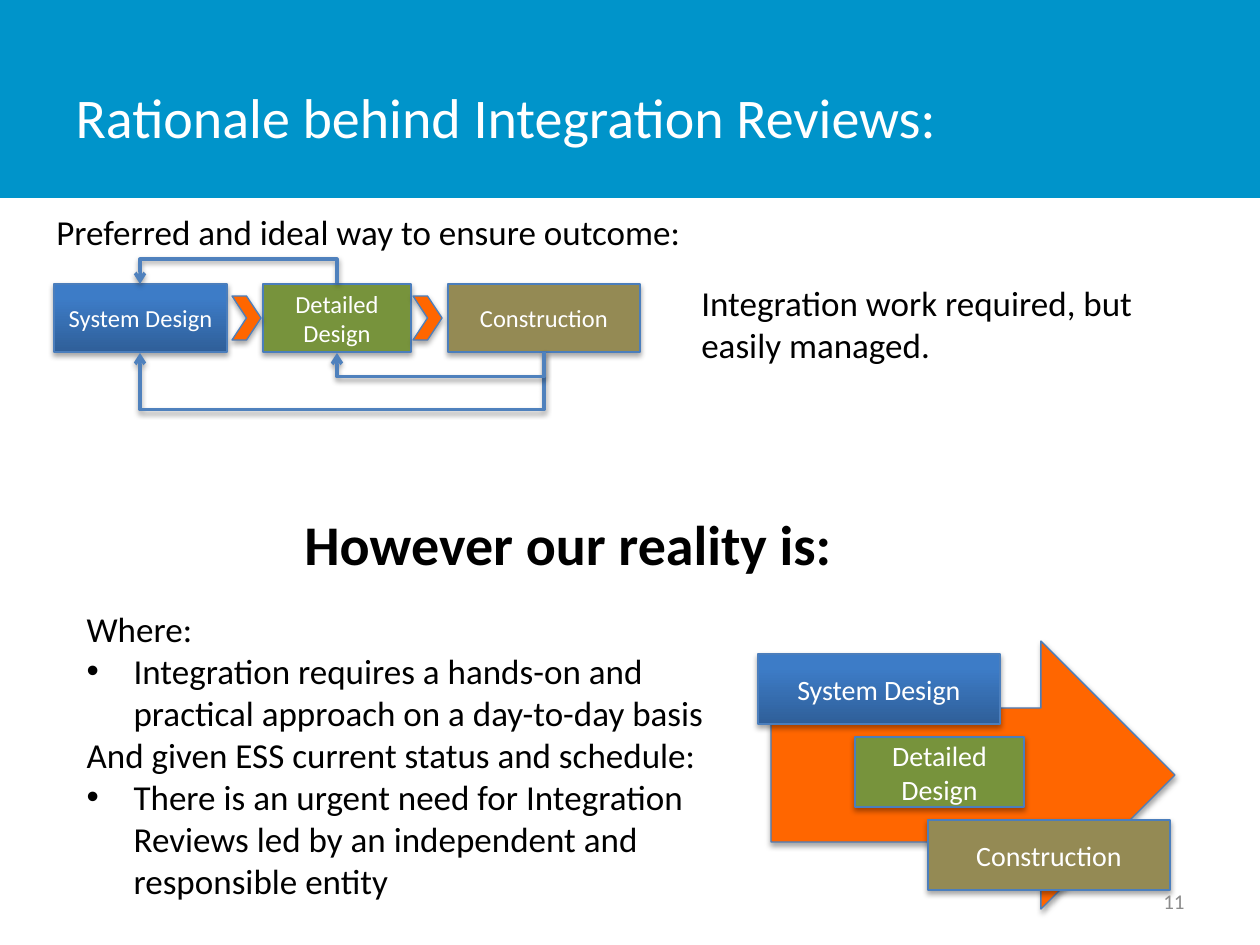
from lxml.etree import SubElement
from pptx import Presentation
from pptx.dml.color import RGBColor
from pptx.enum.shapes import MSO_CONNECTOR, MSO_SHAPE
from pptx.enum.text import MSO_ANCHOR, MSO_AUTO_SIZE, PP_ALIGN
from pptx.oxml.ns import qn
from pptx.util import Pt

SCALE = 914400 / 126
EDGE, WIRE, ORANGE = "4B7EBC", "4F81BD", "FF6600"
BLUE = ("2F5F99", "3D7CC7")
STEPS = (("System Design", BLUE), ("Detailed Design", "77933C"),
         ("Construction", "948A54"))


def px(*nums):
    return [round(n * SCALE) for n in nums]


def color(code):
    return RGBColor.from_string(code)


def assign(item, values):
    for key, value in values.items():
        setattr(item, key, value)


def style(para, size, code="000000", bold=False, align=PP_ALIGN.LEFT):
    assign(para, {"alignment": align, "space_before": Pt(0)})
    assign(para.font, {"size": Pt(size), "name": "Calibri", "bold": bold})
    para.font.color.rgb = color(code)


def shade(effects, dist, alpha):
    shadow = SubElement(effects, qn("a:outerShdw"), blurRad="40000",
                        dist=str(dist), dir="5400000", rotWithShape="0")
    tint = SubElement(shadow, qn("a:srgbClr"), val="000000")
    SubElement(tint, qn("a:alpha"), val=str(alpha))


def block(slide, kind, box, fill, text="", size=14):
    shape = slide.shapes.add_shape(kind, *px(*box))
    if fill == BLUE:
        shape.fill.gradient()
        shape.fill.gradient_angle = 90
        for stop, code, place in zip(shape.fill.gradient_stops, fill, (0, 0.8)):
            stop.color.rgb = color(code)
            stop.position = place
    else:
        shape.fill.solid()
        shape.fill.fore_color.rgb = color(fill)
    shape.line.color.rgb = color(EDGE)
    shape.line.width = Pt(0.75)
    shape.shadow.inherit = False
    shade(shape._element.spPr.find(qn("a:effectLst")), 23000, 35000)
    if text:
        frame = shape.text_frame
        assign(frame, {"text": text, "word_wrap": True,
                       "vertical_anchor": MSO_ANCHOR.MIDDLE})
        style(frame.paragraphs[0], size, "FFFFFF", align=PP_ALIGN.CENTER)


def loop(slide, start, end, y, bend):
    """Draw a U-shaped arrow leftwards, leaving height y by bend."""
    mid, half = (start + end) / 2, (start - end) / 2
    # A one px wide elbow, turned by a quarter
    wire = slide.shapes.add_connector(
        MSO_CONNECTOR.ELBOW,
        *px(mid - 0.5, y + 0.5 - half, mid + 0.5, y + 0.5 + half))
    wire.line.color.rgb = color(WIRE)
    wire.line.width = Pt(2)
    props = wire._element.spPr
    props.find(qn("a:xfrm")).set("rot", "5400000")
    SubElement(props.find(".//" + qn("a:avLst")), qn("a:gd"),
               name="adj1", fmla=f"val {bend * 100000}")
    SubElement(props.find(qn("a:ln")), qn("a:tailEnd"), type="arrow")
    shade(SubElement(props, qn("a:effectLst")), 20000, 38000)


def label(slide, box, text, size, wrap=True, **look):
    frame = slide.shapes.add_textbox(*px(*box)).text_frame
    assign(frame, {"text": text, "word_wrap": wrap})
    style(frame.paragraphs[0], size, **look)
    return frame


def header(slide, box):
    x, y, w, h = box
    band = slide.shapes.add_shape(MSO_SHAPE.RECTANGLE, *px(*box))
    band.fill.solid()
    band.fill.fore_color.rgb = color("0094CA")
    band.line.fill.background()
    band.shadow.inherit = False
    # Keep the band behind the title
    slide.shapes._spTree.insert(2, band._element)
    title = slide.shapes.title
    spots = px(x + 63, y + 38, w - 276, h - 41)
    assign(title, dict(zip(("left", "top", "width", "height"), spots)))
    assign(title.text_frame, {"text": "Rationale behind Integration Reviews:",
                              "vertical_anchor": MSO_ANCHOR.MIDDLE})
    style(title.text_frame.paragraphs[0], 32, "FFFFFF")


def ideal(slide, box):
    x, y, w, h = box
    label(slide, (x - 10, y - 80, 659, 55),
          "Preferred and ideal way to ensure outcome:", 20, wrap=False)
    label(slide, (x + 635, y - 9, 507, 97),
          "Integration work required, but easily managed.", 20)
    # Steps in a row
    spans = ((0, 173), (209, 148), (394, w - 394))
    for (left, wide), (name, fill) in zip(spans, STEPS):
        block(slide, MSO_SHAPE.RECTANGLE, (x + left, y, wide, h), fill, name)
    # Feedback loops
    first, second, third = (x + left + wide // 2 for left, wide in spans)
    loop(slide, second, first, y - 1, -24)
    loop(slide, third, first, y + h, 58)
    loop(slide, third, second, y + h, 25)
    for left in (178, 359):
        block(slide, MSO_SHAPE.CHEVRON, (x + left, y + 12, 29, 44), ORANGE)


def reality(slide, box):
    x, y, w, h = box
    block(slide, MSO_SHAPE.RIGHT_ARROW, (x + 13, y, w - 13, h), ORANGE)
    # Overlapping steps
    for row, (left, wide) in enumerate(((0, 242), (97, 169), (170, 242))):
        name, fill = STEPS[row]
        block(slide, MSO_SHAPE.RECTANGLE,
              (x + left, y + 13 + 83 * row, wide, 70), fill, name, 16)


def reasons(slide, box):
    body = slide.placeholders[1]
    assign(body, dict(zip(("left", "top", "width", "height"), px(*box))))
    frame = body.text_frame
    lines = (
        ("Where:", False),
        ("Integration requires a hands-on and practical approach on a "
         "day-to-day basis", True),
        ("And given ESS current status and schedule:", False),
        ("There is an urgent need for Integration Reviews led by an "
         "independent and responsible entity", True))
    frame.text = "\n".join(text for text, _ in lines)
    assign(frame, {"auto_size": MSO_AUTO_SIZE.NONE, "word_wrap": True,
                   "vertical_anchor": MSO_ANCHOR.TOP})
    for para, (_, dot) in zip(frame.paragraphs, lines):
        props = para._p.get_or_add_pPr()
        indent = px(47)[0] if dot else 0
        props.set("marL", str(indent))
        props.set("indent", str(-indent))
        if dot:
            SubElement(props, qn("a:buFont"), typeface="Arial")
            SubElement(props, qn("a:buChar"), char="•")
        else:
            SubElement(props, qn("a:buNone"))
        style(para, 20)


def main():
    deck = Presentation()
    deck.slide_width, deck.slide_height = px(1260, 945)
    slide = deck.slides.add_slide(deck.slide_layouts[1])
    header(slide, (0, 0, 1260, 198))
    ideal(slide, (54, 284, 586, 68))
    label(slide, (292, 503, 559, 81), "However our reality is:", 32,
          wrap=False, bold=True)
    reasons(slide, (74, 601, 684, 310))
    reality(slide, (758, 641, 417, 268))
    # Page number
    page = label(slide, (903, 876, 294, 50), "11", 12, code="8C8C8C",
                 align=PP_ALIGN.RIGHT)
    page.vertical_anchor = MSO_ANCHOR.MIDDLE
    deck.save("out.pptx")


if __name__ == "__main__":
    main()
